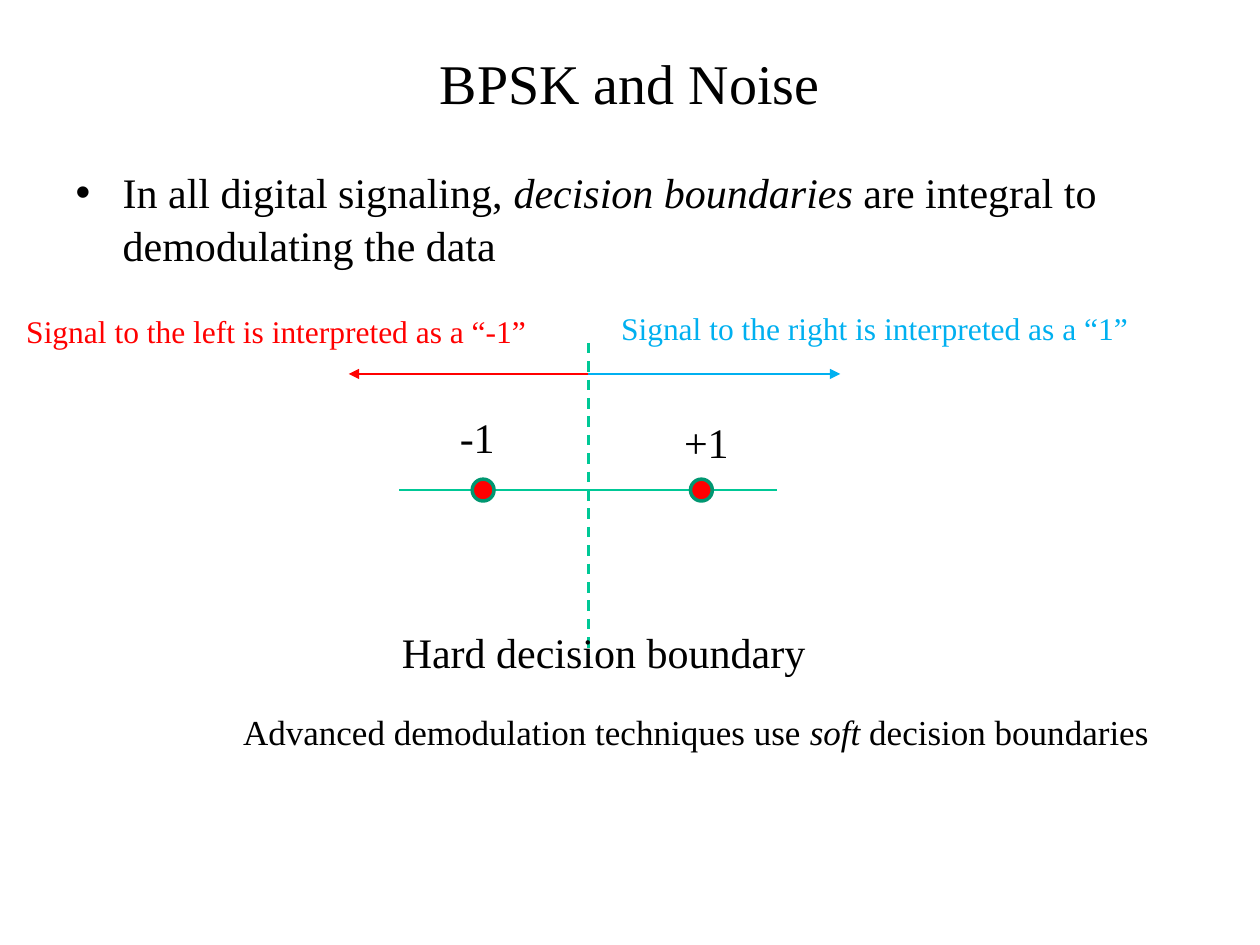
from lxml import etree
from pptx import Presentation
from pptx import util as u
from pptx.dml.color import RGBColor
from pptx.enum import dml, shapes, text
from pptx.oxml import ns

FONT = "Times New Roman"
COLOURS = {
    "text": "000000",
    "axis": "00C896",
    "outline": "009771",
    "negative": "FF0000",
    "positive": "00B0F0",
    "point": "FF0000",
}


def colour(name):
    """Return the named colour as an RGB value."""
    return RGBColor.from_string(COLOURS[name])


def place(shape, box):
    """Move a shape to a box of left, top, width and height in centimetres."""
    shape.left, shape.top, shape.width, shape.height = map(u.Cm, box)


def add_runs(paragraph, runs, size, colour_name="text"):
    """Add (wording, italic) runs in the slide's font."""
    for wording, italic in runs:
        run = paragraph.add_run()
        run.text = wording
        run.font.name = FONT
        run.font.size = u.Pt(size)
        run.font.italic = italic
        run.font.color.rgb = colour(colour_name)


def add_label(slide, box, runs, size, colour_name="text"):
    """Add a single-line label that does not wrap."""
    label = slide.shapes.add_textbox(*map(u.Cm, box))
    frame = label.text_frame
    frame.word_wrap = False
    frame.auto_size = text.MSO_AUTO_SIZE.SHAPE_TO_FIT_TEXT
    add_runs(frame.paragraphs[0], runs, size, colour_name)


def add_line(slide, start, end, colour_name, dashed=False, arrow=False):
    """Draw a straight line, optionally dashed or with an arrowhead at its end."""
    line = slide.shapes.add_connector(
        shapes.MSO_CONNECTOR.STRAIGHT, *map(u.Cm, (*start, *end))
    )
    line.line.color.rgb = colour(colour_name)
    line.line.width = u.Pt(1.5)
    if dashed:
        line.line.dash_style = dml.MSO_LINE.DASH
    if arrow:
        outline = line.line._get_or_add_ln()
        etree.SubElement(outline, ns.qn("a:tailEnd"), type="triangle")
    etree.SubElement(line._element.spPr, ns.qn("a:effectLst"))


def add_point(slide, x, y, diameter=0.44):
    """Draw a constellation point centred on x and y."""
    corner = (x - diameter / 2, y - diameter / 2)
    point = slide.shapes.add_shape(
        shapes.MSO_SHAPE.OVAL, *map(u.Cm, (*corner, diameter, diameter))
    )
    point.shadow.inherit = False
    point.fill.solid()
    point.fill.fore_color.rgb = colour("point")
    point.line.color.rgb = colour("outline")
    point.line.width = u.Pt(2)


def build_title(slide, box):
    """Fill the title placeholder."""
    title = slide.shapes.title
    place(title, box)
    frame = title.text_frame
    frame.auto_size = text.MSO_AUTO_SIZE.NONE
    frame.vertical_anchor = text.MSO_ANCHOR.MIDDLE
    paragraph = frame.paragraphs[0]
    paragraph.alignment = text.PP_ALIGN.CENTER
    add_runs(paragraph, [("BPSK and Noise", False)], 32)


def build_body(slide, box):
    """Fill the body placeholder with its one bullet."""
    body = slide.placeholders[1]
    place(body, box)
    frame = body.text_frame
    frame.auto_size = text.MSO_AUTO_SIZE.NONE
    paragraph = frame.paragraphs[0]
    properties = paragraph._p.get_or_add_pPr()
    properties.set("marL", str(u.Cm(0.95)))
    properties.set("indent", str(u.Cm(-0.95)))
    etree.SubElement(properties, ns.qn("a:buChar"), char="•")
    paragraph.space_before = u.Pt(0)
    paragraph.line_spacing = 1.05
    runs = [
        ("In all digital signaling, ", False),
        ("decision boundaries ", True),
        ("are integral to demodulating the data", False),
    ]
    add_runs(paragraph, runs, 24)


def build_diagram(slide, box):
    """Draw the signal axis, its two points and the hard decision boundary."""
    left, top, width, height = box
    middle = left + width / 2
    axis_y = top + 3.78
    arrow_y = top + 1.44

    add_line(slide, (middle, top + 0.81), (middle, top + height), "axis", dashed=True)
    add_line(slide, (middle - 3.81, axis_y), (middle + 3.81, axis_y), "axis")
    for offset in (-2.12, 2.28):
        add_point(slide, middle + offset, axis_y)
    for reach, name in ((5.08, "positive"), (-4.83, "negative")):
        add_line(slide, (middle, arrow_y), (middle + reach, arrow_y), name, arrow=True)

    labels = [
        ("-1", -2.84, 2.08, 1.22, 1.27, 24, "text"),
        ("+1", 1.68, 2.18, 1.42, 1.27, 24, "text"),
        ("Signal to the right is interpreted as a “1”",
         0.41, 0, 10.85, 1.02, 18, "positive"),
        ("Signal to the left is interpreted as a “-1”",
         -11.58, 0.07, 10.69, 1.02, 18, "negative"),
        ("Hard decision boundary", -4.01, 6.4, 8.71, 1.27, 24, "text"),
    ]
    for wording, x, y, label_width, label_height, size, name in labels:
        label_box = (middle + x, top + y, label_width, label_height)
        add_label(slide, label_box, [(wording, False)], size, name)


def build_remark(slide, box):
    """Add the closing remark on soft decisions."""
    runs = [
        ("Advanced demodulation techniques use ", False),
        ("soft", True),
        (" decision boundaries", False),
    ]
    add_label(slide, box, runs, 20)


def main():
    """Build and save the slide."""
    presentation = Presentation()
    presentation.slide_width = u.Cm(25.4)
    presentation.slide_height = u.Cm(19.05)
    slide = presentation.slides.add_slide(presentation.slide_layouts[1])
    build_title(slide, (1.27, 0.76, 22.86, 1.78))
    build_body(slide, (1.27, 3.18, 22.86, 2.34))
    build_diagram(slide, (0.28, 6.1, 23.16, 7.16))
    build_remark(slide, (4.65, 14.2, 18.9, 1.12))
    presentation.save("out.pptx")


if __name__ == "__main__":
    main()
